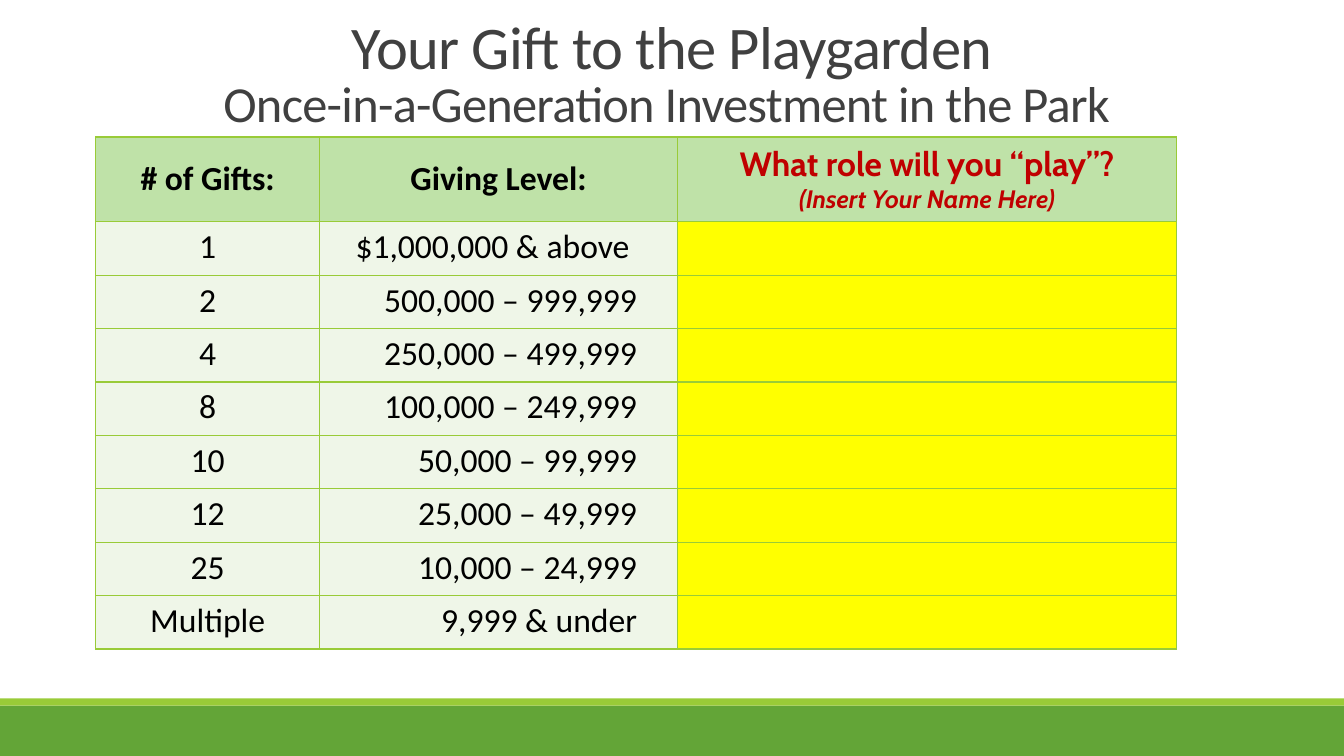
import lxml.etree
import pptx
import pptx.dml.color
import pptx.enum.shapes
import pptx.enum.text
import pptx.oxml.ns
import pptx.util

Inches, Pt = pptx.util.Inches, pptx.util.Pt
RGBColor = pptx.dml.color.RGBColor
ALIGN, ANCHOR = pptx.enum.text.PP_ALIGN, pptx.enum.text.MSO_ANCHOR
qn = pptx.oxml.ns.qn

GREEN = RGBColor(0x63, 0xA5, 0x37)
LIME = RGBColor(0x99, 0xCB, 0x38)
HEADER = RGBColor(0xBF, 0xE2, 0xA8)
PALE = RGBColor(0xEF, 0xF6, 0xE8)
YELLOW = RGBColor(0xFF, 0xFF, 0x00)
RED = RGBColor(0xC0, 0x00, 0x00)
GREY = RGBColor(0x40, 0x40, 0x40)
BLACK = RGBColor(0x00, 0x00, 0x00)

GIFTS = [
    ("1", "$1,000,000 & above "),
    ("2", "500,000 – 999,999"),
    ("4", "250,000 – 499,999"),
    ("8", "100,000 – 249,999"),
    ("10", "50,000 – 99,999"),
    ("12", "25,000 – 49,999"),
    ("25", "10,000 – 24,999"),
    ("Multiple", "9,999 & under"),
]
COL_WIDTHS = [2.22, 3.55, 4.95]
HEADER_HEIGHT = 0.84


def style(p, size, color, name="Calibri", bold=False, italic=False, align=ALIGN.CENTER):
    """Set the alignment and font of a paragraph."""
    p.alignment = align
    f = p.font
    f.size, f.name, f.bold, f.italic = Pt(size), name, bold, italic
    f.color.rgb = color


def add_footer(s, left, top, width, height):
    """Draw the green footer band with a thin lime strip along its top."""
    strip = 0.07
    for y, h, color in ((top + strip, height - strip, GREEN), (top, strip, LIME)):
        sp = s.shapes.add_shape(pptx.enum.shapes.MSO_SHAPE.RECTANGLE,
                                Inches(left), Inches(y), Inches(width), Inches(h))
        sp.shadow.inherit = False
        sp.fill.solid()
        sp.fill.fore_color.rgb = color
        sp.line.fill.background()


def add_title(s, left, top, width, height):
    """Place the two-line title in the title placeholder."""
    sp = s.shapes.title
    sp.left, sp.top, sp.width, sp.height = map(Inches, (left, top, width, height))
    tf = sp.text_frame
    tf.word_wrap = True
    tf.auto_size = pptx.enum.text.MSO_AUTO_SIZE.NONE
    tf.vertical_anchor = ANCHOR.BOTTOM
    p = tf.paragraphs[0]
    p.line_spacing = 0.85
    style(p, 43.2, GREY)
    heading = p.add_run()
    heading.text = "Your Gift to the Playgarden"
    p.add_line_break()
    subheading = p.add_run()
    subheading.text = "Once-in-a-Generation Investment in the Park "
    subheading.font.size = Pt(36)
    for r in (heading, subheading):
        r.font._element.set("spc", "-50")


def format_cell(cell, color):
    """Give a cell its fill and four thin lime borders."""
    tc_pr = cell._tc.get_or_add_tcPr()
    for side in ("a:lnL", "a:lnR", "a:lnT", "a:lnB"):
        ln = lxml.etree.SubElement(tc_pr, qn(side), w=str(Pt(1)))
        fill = lxml.etree.SubElement(ln, qn("a:solidFill"))
        lxml.etree.SubElement(fill, qn("a:srgbClr"), val=str(LIME))
    cell.fill.solid()
    cell.fill.fore_color.rgb = color


def add_gift_table(s, left, top, width, height):
    """Build the table of gift counts, giving levels and donor spaces."""
    table = s.shapes.add_table(len(GIFTS) + 1, len(COL_WIDTHS), Inches(left), Inches(top),
                               Inches(width), Inches(height)).table
    table.first_row = table.horz_banding = False
    for column, w in zip(table.columns, COL_WIDTHS):
        column.width = Inches(w)
    for row in table.rows:
        row.height = Inches((height - HEADER_HEIGHT) / len(GIFTS))
    table.rows[0].height = Inches(HEADER_HEIGHT)

    headings = ("# of Gifts:", "Giving Level:", "What role will you “play”?")
    for col, text in enumerate(headings):
        cell = table.cell(0, col)
        format_cell(cell, HEADER)
        cell.vertical_anchor = ANCHOR.MIDDLE
        p = cell.text_frame.paragraphs[0]
        p.text = text
        style(p, 24, BLACK, bold=True)
    style(p, 24, RED, "Cabin", bold=True)
    p = cell.text_frame.add_paragraph()
    p.text = "(Insert Your Name Here)"
    style(p, 18, RED, "Cabin", bold=True, italic=True)

    for row, gift in enumerate(GIFTS, 1):
        for col, (text, align) in enumerate(zip(gift, (ALIGN.CENTER, ALIGN.RIGHT))):
            cell = table.cell(row, col)
            format_cell(cell, PALE)
            p = cell.text_frame.paragraphs[0]
            p.text = text
            style(p, 24, BLACK, align=align)
        cell.margin_right = Inches(0.4)
        format_cell(table.cell(row, 2), YELLOW)


def main():
    """Create the slide and save the presentation."""
    prs = pptx.Presentation()
    prs.slide_width, prs.slide_height = Inches(13.33), Inches(7.5)
    s = prs.slides.add_slide(prs.slide_layouts[5])
    add_footer(s, 0, 6.93, 13.33, 0.57)
    add_title(s, 0, 0.35, 13.33, 1.02)
    add_gift_table(s, 0.95, 1.36, sum(COL_WIDTHS), 5.08)
    prs.save("out.pptx")


if __name__ == "__main__":
    main()
